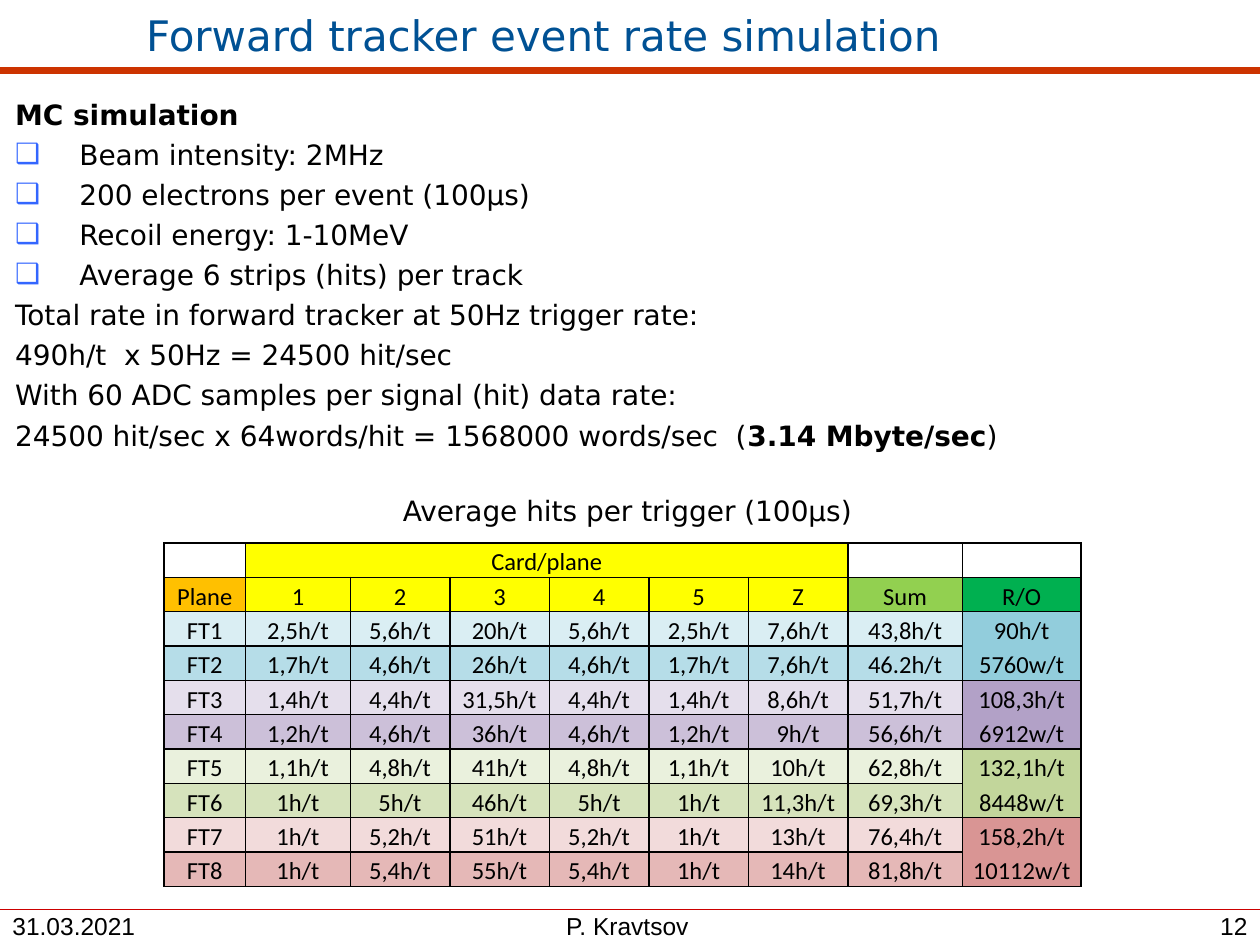
from lxml import etree
from pptx import Presentation
from pptx.dml.color import RGBColor
from pptx.enum.shapes import MSO_CONNECTOR
from pptx.enum.text import MSO_ANCHOR as Anchor, MSO_AUTO_SIZE as AutoSize, PP_ALIGN as Align
from pptx.oxml.ns import qn
from pptx.util import Inches, Pt


def color(hex_value):
    return RGBColor.from_string(hex_value)


class SlideBuilder:
    """Holds the style and the current slide."""
    text_font, table_font, footer_font = "DejaVu Sans", "Calibri", "Arial"
    black, title_color, bullet_color = "000000", "005194", "3366FF"
    space_before = Pt(3.73)

    def __init__(self, slide):
        self.slide = slide

    def format(self, paragraph, size, font, hex_value=black, align=Align.LEFT, bold=False):
        paragraph.alignment = align
        paragraph.font.size = Pt(size)
        paragraph.font.name = font
        paragraph.font.bold = bold
        paragraph.font.color.rgb = color(hex_value)

    def place(self, shape, left, top, width, height):
        shape.left, shape.top = Inches(left), Inches(top)
        shape.width, shape.height = Inches(width), Inches(height)
        shape.text_frame.word_wrap = True
        shape.text_frame.auto_size = AutoSize.NONE

    def rule(self, y, hex_value, width):
        line = self.slide.shapes.add_connector(
            MSO_CONNECTOR.STRAIGHT, 0, Inches(y), Inches(10), Inches(y))
        line.line.color.rgb = color(hex_value)
        line.line.width = Pt(width)
        etree.SubElement(line._element.spPr, qn("a:effectLst"))

    def title(self, text, *box):
        shape = self.slide.shapes.title
        self.place(shape, *box)
        shape.text_frame.text = text
        shape.text_frame.vertical_anchor = Anchor.MIDDLE
        self.format(shape.text_frame.paragraphs[0], 24, self.text_font, self.title_color)

    def bullet(self, paragraph, shown):
        properties = paragraph._p.get_or_add_pPr()
        indent = Inches(0.51) if shown else 0
        properties.set("marL", str(indent))
        properties.set("indent", str(-indent))
        if not shown:
            etree.SubElement(properties, qn("a:buNone"))
            return
        bullet_color = etree.SubElement(properties, qn("a:buClr"))
        etree.SubElement(bullet_color, qn("a:srgbClr"), val=self.bullet_color)
        etree.SubElement(properties, qn("a:buFont"), typeface=self.text_font)
        etree.SubElement(properties, qn("a:buChar"), char="❑")

    def body(self, lines, *box):
        """Each line is (style, run, run, ...); every second run is bold."""
        shape = self.slide.placeholders[1]
        self.place(shape, *box)
        frame = shape.text_frame
        for index, (style, *runs) in enumerate(lines):
            paragraph = frame.paragraphs[0] if index == 0 else frame.add_paragraph()
            paragraph.space_before = self.space_before if index else Pt(0)
            self.bullet(paragraph, style == "bullet")
            self.format(paragraph, 16, self.text_font, bold=style == "heading")
            for position, text in enumerate(runs):
                run = paragraph.add_run()
                run.text = text
                if position % 2:
                    run.font.bold = True

    def text(self, text, box, size, font, align, anchor=Anchor.TOP, bottom=0.05):
        shape = self.slide.shapes.add_textbox(0, 0, 0, 0)
        self.place(shape, *box)
        frame = shape.text_frame
        frame.text = text
        frame.vertical_anchor = anchor
        frame.margin_bottom = Inches(bottom)
        self.format(frame.paragraphs[0], size, font, align=align)

    def footer(self, text, box, align):
        self.text(text, box, 14, self.footer_font, align, Anchor.BOTTOM, 0.04)

    def cell(self, cell, text, fill):
        cell.text = text
        cell.margin_left = cell.margin_right = Inches(0.07)
        cell.margin_top = cell.margin_bottom = 0
        for paragraph in cell.text_frame.paragraphs:
            paragraph.line_spacing = 1.15
            self.format(paragraph, 14, self.table_font, align=Align.CENTER)
            if not text:
                etree.SubElement(paragraph._p, qn("a:endParaRPr"), sz="1400")
        properties = cell._tc.get_or_add_tcPr()
        for side in ("a:lnL", "a:lnR", "a:lnT", "a:lnB"):
            border = etree.SubElement(properties, qn(side), w=str(Pt(1)))
            solid = etree.SubElement(border, qn("a:solidFill"))
            etree.SubElement(solid, qn("a:srgbClr"), val=self.black)
        if fill:
            cell.fill.solid()
            cell.fill.fore_color.rgb = color(fill)
        else:
            cell.fill.background()

    def table(self, rows, fills, merges, left, top, widths, row_height):
        table = self.slide.shapes.add_table(
            len(rows), len(widths), Inches(left), Inches(top),
            Inches(sum(widths)), Inches(row_height * len(rows))).table
        table.first_row = table.horz_banding = False
        for column, width in zip(table.columns, widths):
            column.width = Inches(width)
        for row_index, (texts, row_fills) in enumerate(zip(rows, fills)):
            table.rows[row_index].height = Inches(row_height)
            for column_index, (text, fill) in enumerate(zip(texts, row_fills)):
                self.cell(table.cell(row_index, column_index), text, fill)
        for first, last in merges:
            table.cell(*first).merge(table.cell(*last))


BODY = [
    ("heading", "MC simulation"),
    ("bullet", "Beam intensity: 2MHz"),
    ("bullet", "200 electrons per event (100μs)"),
    ("bullet", "Recoil energy: 1-10MeV"),
    ("bullet", "Average 6 strips (hits) per track"),
    ("plain", "Total rate in forward tracker at 50Hz trigger rate:"),
    ("plain", "490h/t  x 50Hz = 24500 hit/sec"),
    ("plain", "With 60 ADC samples per signal (hit) data rate:"),
    ("plain", "24500 hit/sec х 64words/hit = 1568000 words/sec  (", "3.14 Mbyte/sec", ")"),
]

# Hits per trigger: cards 1-5, Z and the sum, for planes FT1 to FT8
HITS = [
    "2,5 5,6 20 5,6 2,5 7,6 43,8",
    "1,7 4,6 26 4,6 1,7 7,6 46.2",
    "1,4 4,4 31,5 4,4 1,4 8,6 51,7",
    "1,2 4,6 36 4,6 1,2 9 56,6",
    "1,1 4,8 41 4,8 1,1 10 62,8",
    "1 5 46 5 1 11,3 69,3",
    "1 5,2 51 5,2 1 13 76,4",
    "1 5,4 55 5,4 1 14 81,8",
]
# Each pair of planes: readout text, two row fills and the readout fill
READOUTS = [
    ("90h/t\n5760w/t", "DAEEF3", "B6DDE8", "92CDDC"),
    ("108,3h/t\n6912w/t", "E5DFEC", "CCC0D9", "B2A1C7"),
    ("132,1h/t\n8448w/t", "EAF1DD", "D6E3BC", "C2D69B"),
    ("158,2h/t\n10112w/t", "F2DBDB", "E5B8B7", "D99594"),
]


def table_content():
    rows = [["", "Card/plane"] + [""] * 7,
            ["Plane", "1", "2", "3", "4", "5", "Z", "Sum", "R/O"]]
    yellow = ["FFFF00"] * 6
    fills = [[None, *yellow, None, None], ["FFC000", *yellow, "92D050", "00B050"]]
    merges = [((0, 1), (0, 6))]
    for index, hits in enumerate(HITS):
        pair, second = divmod(index, 2)
        readout, *pair_fills, readout_fill = READOUTS[pair]
        rates = [f"{value}h/t" for value in hits.split()]
        rows.append([f"FT{index + 1}", *rates, "" if second else readout])
        fills.append([pair_fills[second]] * 8 + [readout_fill])
        if second:
            merges.append(((index + 1, 8), (index + 2, 8)))
    return rows, fills, merges


def main():
    presentation = Presentation()
    presentation.slide_width, presentation.slide_height = Inches(10), Inches(7.5)
    slide = presentation.slides.add_slide(presentation.slide_layouts[1])
    builder = SlideBuilder(slide)

    # Rules, title and body
    builder.rule(7.22, "CC0000", 0.25)
    builder.rule(0.56, "CC3300", 4.5)
    builder.title("Forward tracker event rate simulation", 1.06, 0.01, 8.89, 0.53)
    builder.body(BODY, 0.02, 0.72, 8.88, 3.03)

    # Table with its caption
    builder.text("Average hits per trigger (100μs)", (2.44, 3.87, 5.08, 0.35),
                 16, builder.text_font, Align.CENTER)
    widths = [0.65, 0.83] + [0.79] * 5 + [0.91, 0.94]
    builder.table(*table_content(), 1.3, 4.31, widths, 0.27)

    # Footer
    builder.footer("31.03.2021", (0, 7.22, 1.81, 0.28), Align.LEFT)
    builder.footer("P. Kravtsov", (3.11, 7.25, 3.74, 0.25), Align.CENTER)
    builder.footer("12", (7.67, 7.18, 2.33, 0.32), Align.RIGHT)

    presentation.save("out.pptx")


if __name__ == "__main__":
    main()
